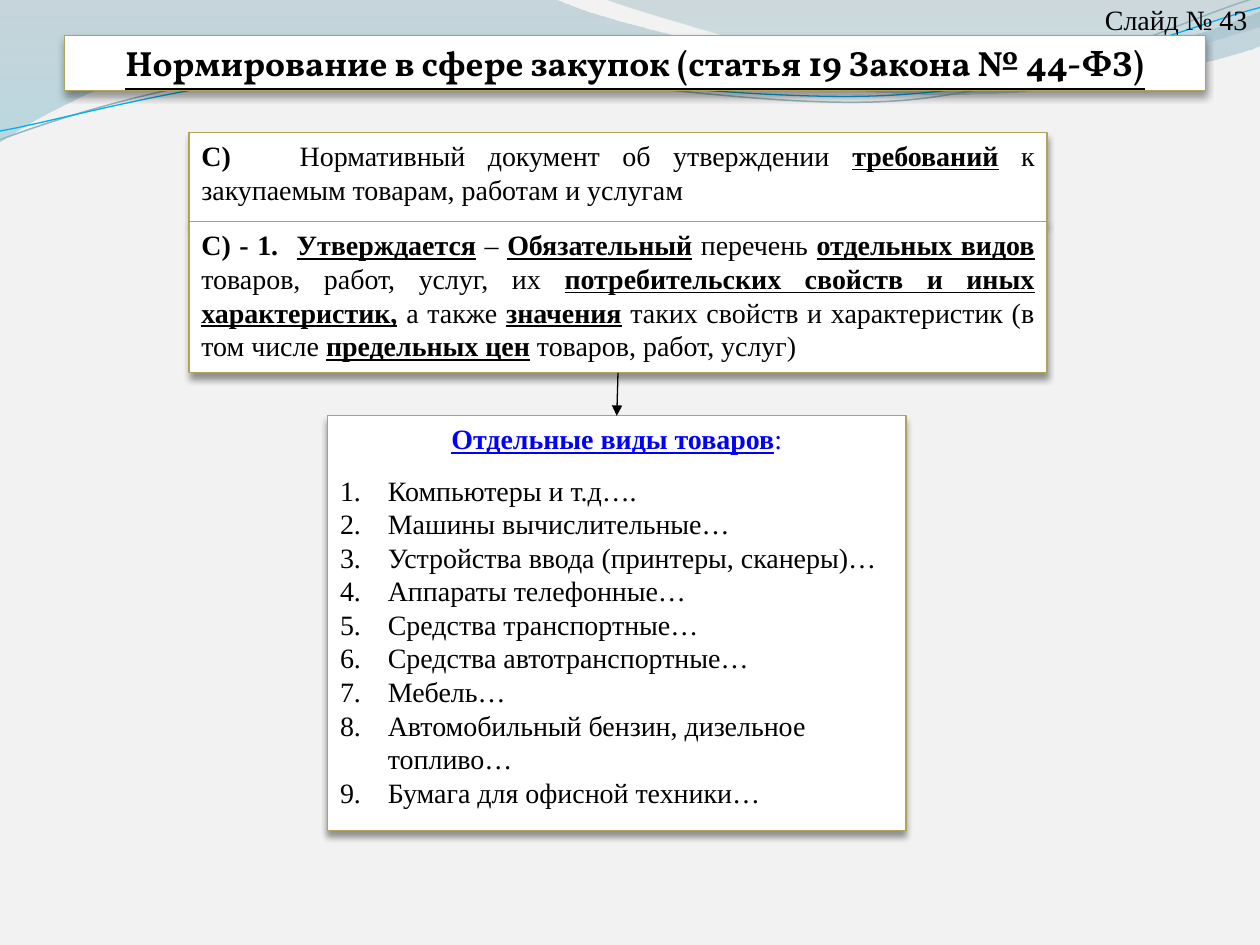
from dataclasses import dataclass
from typing import NamedTuple, Optional

from lxml.etree import SubElement
from pptx import Presentation
from pptx.dml.color import RGBColor
from pptx.enum.shapes import MSO_CONNECTOR, MSO_SHAPE
from pptx.enum.text import MSO_ANCHOR as Anchor, PP_ALIGN as Align
from pptx.oxml.ns import qn
from pptx.util import Inches, Pt


@dataclass(frozen=True)
class Theme:
    background: str = "F2F2F2"
    panel: str = "FFFFFF"
    border: str = "B1A35A"
    ink: str = "000000"
    heading: str = "0000FF"
    body_font: str = "Times New Roman"
    title_font: str = "Vollkorn"
    body_size: int = 16
    title_size: int = 20
    line_width: float = 0.75


THEME = Theme()


class Box(NamedTuple):
    left: float
    top: float
    width: float
    height: float


class Span(NamedTuple):
    text: str
    bold: bool = False
    underline: bool = False


class Stop(NamedTuple):
    position: float
    color: str
    opacity: int


@dataclass(frozen=True)
class Wave:
    start: tuple
    segments: tuple
    stops: tuple = ()
    line_color: Optional[str] = None
    line_width: float = 0.75


WAVES = (
    Wave((0, 0), (
        (4.4, -0.01), (4.76, 0.17, 6.64, 0.63, 7.58, 0.63),
        (8.53, 0.63, 9.58, 0.26, 10, 0.09), (10.01, 0.36),
        (9.83, 0.44, 8.7, 0.76, 7.46, 0.75), (6.22, 0.75, 3.82, 0.28, 2.57, 0.34),
        (1.29, 0.36, 0.46, 0.83, -0.01, 1.13)),
        stops=(Stop(0, "91B3C1", 45), Stop(1, "8DC1CF", 55))),
    Wave((4.79, -0.01), (
        (5.09, 0.11, 6.82, 0.62, 7.69, 0.65),
        (8.56, 0.69, 9.61, 0.32, 10, 0.21), (10, 0)),
        stops=(Stop(0, "779BA4", 30), Stop(0.8, "A8D8EB", 45))),
    Wave((0, 1.11), (
        (0.48, 0.93, 1.58, 0.57, 2.77, 0.52), (3.95, 0.47, 5.93, 0.89, 7.13, 0.8),
        (8.33, 0.71, 9.38, 0.15, 9.98, -0.02)),
        line_color="94B5BE", line_width=0.85),
    Wave((0, 1.04), (
        (0.47, 0.96, 1.64, 0.61, 2.83, 0.56), (4.03, 0.51, 5.97, 0.84, 7.17, 0.75),
        (8.36, 0.67, 9.41, 0.21, 10, 0.06)),
        line_color="00B0F0"),
)

REQUIREMENT = (
    Span("С)\t", True), Span("Нормативный документ об утверждении "),
    Span("требований", True, True), Span(" к закупаемым товарам, работам и услугам"),
)
APPROVAL = (
    Span("С) - 1.\t", True), Span("Утверждается", True, True), Span(" – "),
    Span("Обязательный", True, True), Span(" перечень "),
    Span("отдельных видов", True, True), Span(" товаров, работ, услуг, их "),
    Span("потребительских свойств и иных характеристик,", True, True),
    Span(" а также "), Span("значения", True, True),
    Span(" таких свойств и характеристик (в том числе "),
    Span("предельных цен", True, True), Span(" товаров, работ, услуг)"),
)
GOODS_HEADING = (Span("Отдельные виды товаров", True, True), Span(":"))
GOODS = (
    "Компьютеры и т.д….", "Машины вычислительные…",
    "Устройства ввода (принтеры, сканеры)…", "Аппараты телефонные…",
    "Средства транспортные…", "Средства автотранспортные…", "Мебель…",
    "Автомобильный бензин, дизельное топливо…", "Бумага для офисной техники…",
)


def rgb(color: str) -> RGBColor:
    return RGBColor.from_string(color)


def bend_segments(shape, segments: tuple) -> None:
    lines = iter(list(shape.element.iter(qn("a:lnTo"))))
    for segment in segments:
        first, *others = [next(lines) for _ in range(len(segment) // 2)]
        if others:
            first.tag = qn("a:cubicBezTo")
            for line in others:
                first.append(line[0])
                line.getparent().remove(line)


def draw_wave(slide, wave: Wave):
    points = [wave.start] + [segment[i:i + 2] for segment in wave.segments
                             for i in range(0, len(segment), 2)]
    outline = [(Inches(x), Inches(y)) for x, y in points]
    builder = slide.shapes.build_freeform(*outline[0])
    builder.add_line_segments(outline[1:], close=bool(wave.stops))
    shape = builder.convert_to_shape()
    bend_segments(shape, wave.segments)
    shape.shadow.inherit = False
    if wave.line_color:
        shape.fill.background()
        shape.line.color.rgb = rgb(wave.line_color)
        shape.line.width = Pt(wave.line_width)
        return shape
    shape.line.fill.background()
    shape.fill.gradient()
    shape.fill.gradient_angle = 270
    for target, stop in zip(shape.fill.gradient_stops, wave.stops):
        target.position = stop.position
        target.color.rgb = rgb(stop.color)
    for node, stop in zip(shape.element.iter(qn("a:srgbClr")), wave.stops):
        SubElement(node, qn("a:alpha"), val=str(stop.opacity * 1000))
    return shape


def decorate_master(slide) -> None:
    master_tree = slide.slide_layout.slide_master.shapes[0].element.getparent()
    for index, wave in enumerate(WAVES):
        element = draw_wave(slide, wave).element
        next(element.iter(qn("p:cNvPr"))).set("id", str(101 + index))
        master_tree.insert(2 + index, element)


def style_run(run, bold: bool = False, underline: bool = False,
              color: str = THEME.ink, font: str = THEME.body_font,
              size: int = THEME.body_size) -> None:
    run.font.name = font
    run.font.size = Pt(size)
    run.font.bold = bold
    run.font.underline = underline
    run.font.color.rgb = rgb(color)


def write_spans(paragraph, spans: tuple, align: Align, color: str = THEME.ink) -> None:
    paragraph.alignment = align
    paragraph.space_after = Pt(10)
    for span in spans:
        run = paragraph.add_run()
        run.text = span.text
        style_run(run, span.bold, span.underline, color)


def add_tab_stop(paragraph, position: float) -> None:
    tabs = SubElement(paragraph._p.get_or_add_pPr(), qn("a:tabLst"))
    SubElement(tabs, qn("a:tab"), pos=str(Inches(position)), algn="l")


def number_paragraph(paragraph, indent: float) -> None:
    properties = paragraph._p.get_or_add_pPr()
    properties.set("marL", str(Inches(indent)))
    properties.set("indent", str(-Inches(indent)))
    SubElement(properties, qn("a:buFontTx"))
    SubElement(properties, qn("a:buAutoNum"), type="arabicPeriod")


def style_panel(shape) -> None:
    shape.fill.solid()
    shape.fill.fore_color.rgb = rgb(THEME.panel)
    shape.line.color.rgb = rgb(THEME.border)
    shape.line.width = Pt(THEME.line_width)
    shape.shadow.inherit = False
    effects = shape.element.spPr.find(qn("a:effectLst"))
    shadow = SubElement(effects, qn("a:outerShdw"), blurRad=str(Pt(4)), dist=str(Pt(3)),
                        dir="5400000", rotWithShape="0")
    shade = SubElement(shadow, qn("a:srgbClr"), val=THEME.ink)
    SubElement(shade, qn("a:alpha"), val="40000")


def add_panel(slide, box: Box):
    panel = slide.shapes.add_shape(MSO_SHAPE.RECTANGLE, *map(Inches, box))
    style_panel(panel)
    panel.text_frame.word_wrap = True
    panel.text_frame.vertical_anchor = Anchor.TOP
    return panel


def add_clause(slide, box: Box, spans: tuple, tab: float):
    clause = add_panel(slide, box)
    paragraph = clause.text_frame.paragraphs[0]
    write_spans(paragraph, spans, Align.JUSTIFY)
    add_tab_stop(paragraph, tab)
    return clause


def add_goods(slide, box: Box):
    goods = add_panel(slide, box)
    frame = goods.text_frame
    write_spans(frame.paragraphs[0], GOODS_HEADING, Align.CENTER, THEME.heading)
    for item in GOODS:
        paragraph = frame.add_paragraph()
        paragraph.text = item
        paragraph.alignment = Align.LEFT
        style_run(paragraph.runs[0])
        number_paragraph(paragraph, 0.38)
    return goods


def add_arrow(slide, source, target) -> None:
    arrow = slide.shapes.add_connector(MSO_CONNECTOR.STRAIGHT, 0, 0, 0, 0)
    arrow.begin_connect(source, 2)
    arrow.end_connect(target, 0)
    arrow.line.color.rgb = rgb(THEME.ink)
    arrow.line.width = Pt(THEME.line_width)
    SubElement(arrow.line._get_or_add_ln(), qn("a:tailEnd"), type="triangle")
    SubElement(arrow.element.spPr, qn("a:effectLst"))


def add_slide_label(slide, box: Box) -> None:
    label = slide.shapes.add_textbox(*map(Inches, box))
    label.text_frame.word_wrap = True
    label.text_frame.text = "Слайд № 43"
    paragraph = label.text_frame.paragraphs[0]
    paragraph.alignment = Align.RIGHT
    style_run(paragraph.runs[0])


def place_title(slide, box: Box) -> None:
    title = slide.shapes.title
    title.left, title.top, title.width, title.height = map(Inches, box)
    title.element.getparent().append(title.element)
    style_panel(title)
    title.text_frame.text = "Нормирование в сфере закупок (статья 19 Закона № 44-ФЗ)"
    title.text_frame.vertical_anchor = Anchor.MIDDLE
    paragraph = title.text_frame.paragraphs[0]
    paragraph.alignment = Align.CENTER
    style_run(paragraph.runs[0], True, True, font=THEME.title_font, size=THEME.title_size)


def main() -> None:
    deck = Presentation()
    deck.slide_width, deck.slide_height = Inches(10), Inches(7.5)
    slide = deck.slides.add_slide(deck.slide_layouts[5])
    slide.background.fill.solid()
    slide.background.fill.fore_color.rgb = rgb(THEME.background)
    decorate_master(slide)
    add_slide_label(slide, Box(0, -0.03, 10, 0.37))
    place_title(slide, Box(0.51, 0.28, 9.06, 0.44))
    add_clause(slide, Box(1.5, 1.05, 6.81, 0.71), REQUIREMENT, 0.78)
    approval = add_clause(slide, Box(1.5, 1.76, 6.81, 1.2), APPROVAL, 0.73)
    goods = add_goods(slide, Box(2.6, 3.3, 4.59, 3.29))
    add_arrow(slide, approval, goods)
    deck.save("out.pptx")


if __name__ == "__main__":
    main()
